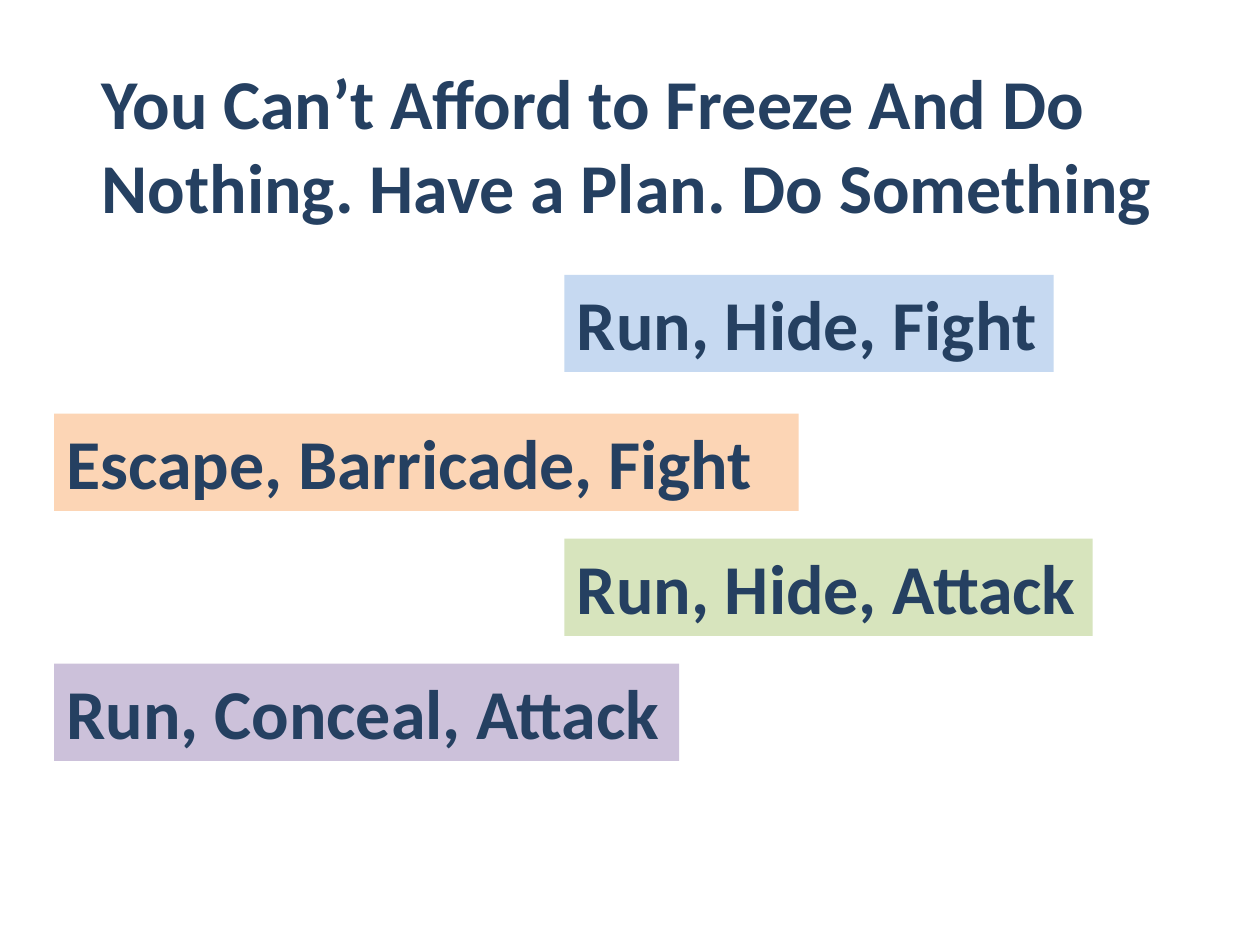
from pptx import Presentation
from pptx.dml.color import RGBColor
from pptx.enum.text import MSO_ANCHOR, MSO_AUTO_SIZE, PP_ALIGN
from pptx.util import Cm, Pt

LEFT = PP_ALIGN.LEFT
TOP = MSO_ANCHOR.TOP
FIT_SHAPE = MSO_AUTO_SIZE.SHAPE_TO_FIT_TEXT

COLORS = {
    "text": "254061",
    "blue": "C6D9F1",
    "orange": "FCD5B5",
    "green": "D7E4BD",
    "purple": "CCC1DA",
}
TITLE_ONLY = 5
LEFT_X, RIGHT_X = 1.09, 11.38
LABEL_H = 1.96

# Label text, fill, left, top, width (cm)
LABELS = [
    ("Run, Hide, Fight", "blue", RIGHT_X, 5.54, 9.86),
    ("Escape, Barricade, Fight", "orange", LEFT_X, 8.34, 15.01),
    ("Run, Hide, Attack", "green", RIGHT_X, 10.86, 10.65),
    ("Run, Conceal, Attack", "purple", LEFT_X, 13.38, 12.6),
]


def rgb(name):
    return RGBColor.from_string(COLORS[name])


def set_text(sp, text):
    tf = sp.text_frame
    tf.text = text
    tf.word_wrap = True
    tf.auto_size = FIT_SHAPE
    tf.vertical_anchor = TOP
    p = tf.paragraphs[0]
    p.alignment = LEFT
    font = p.runs[0].font
    font.name = "Calibri"
    font.size = Pt(40)
    font.bold = True
    font.color.rgb = rgb("text")


def add_title(slide, text, x, y, w, h):
    sp = slide.shapes.title
    sp.left, sp.top, sp.width, sp.height = Cm(x), Cm(y), Cm(w), Cm(h)
    set_text(sp, text)


def add_label(slide, text, color, x, y, w, h):
    sp = slide.shapes.add_textbox(Cm(x), Cm(y), Cm(w), Cm(h))
    sp.fill.solid()
    sp.fill.fore_color.rgb = rgb(color)
    set_text(sp, text)


def main():
    prs = Presentation()
    prs.slide_width, prs.slide_height = Cm(25.4), Cm(19.05)
    slide = prs.slides.add_slide(prs.slide_layouts[TITLE_ONLY])

    # Title
    add_title(slide, "You Can’t Afford to Freeze And Do Nothing. "
              "Have a Plan. Do Something", 1.8, 1.07, 21.8, 3.68)

    # Staggered response plans
    for text, color, x, y, w in LABELS:
        add_label(slide, text, color, x, y, w, LABEL_H)

    prs.save("out.pptx")


if __name__ == "__main__":
    main()
